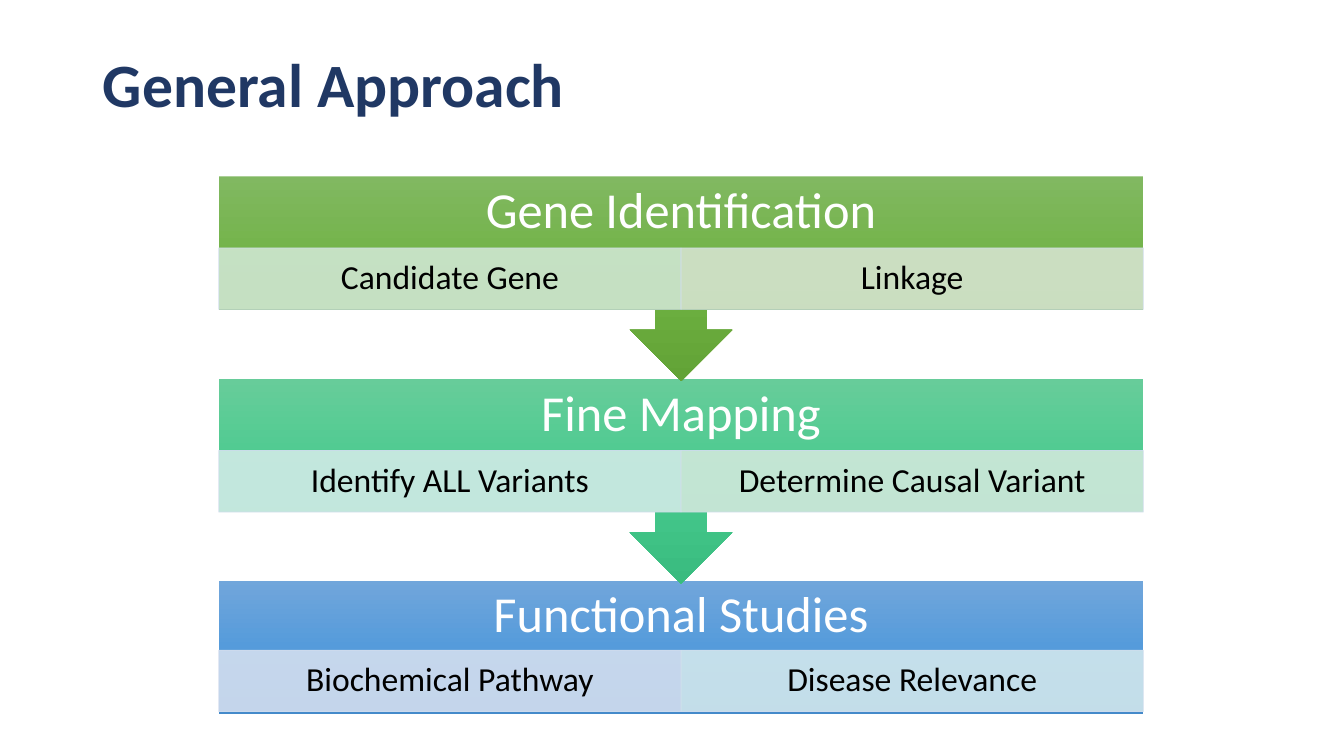
from copy import deepcopy

from pptx import Presentation
from pptx.dml.color import RGBColor
from pptx.enum.shapes import MSO_SHAPE
from pptx.enum.text import MSO_ANCHOR, PP_ALIGN
from pptx.oxml.ns import qn
from pptx.oxml.xmlchemy import OxmlElement
from pptx.util import Inches, Pt

RECTANGLE = MSO_SHAPE.RECTANGLE
DOWN_CALLOUT = MSO_SHAPE.DOWN_ARROW_CALLOUT
MIDDLE = MSO_ANCHOR.MIDDLE
LEFT, CENTER = PP_ALIGN.LEFT, PP_ALIGN.CENTER

FONT = "Calibri"
NAVY = RGBColor(0x20, 0x38, 0x64)
WHITE = RGBColor(0xFF, 0xFF, 0xFF)
BLACK = RGBColor(0x00, 0x00, 0x00)
CELL_LINE = RGBColor(0xD2, 0xDE, 0xEF)
GREENS = [RGBColor(0x81, 0xB8, 0x61), RGBColor(0x6F, 0xB2, 0x42), RGBColor(0x62, 0xA3, 0x36)]
TEALS = [RGBColor(0x67, 0xCC, 0x9A), RGBColor(0x47, 0xCB, 0x8E), RGBColor(0x39, 0xBB, 0x7F)]
BLUES = [RGBColor(0x71, 0xA6, 0xDB), RGBColor(0x55, 0x9B, 0xDB), RGBColor(0x44, 0x8A, 0xCA)]

STAGE_LEFT, STAGE_WIDTH = 2.17, 9.17
HEADER_HEIGHT, CELL_HEIGHT = 0.71, 0.61
CALLOUT_HEIGHT, BLOCK_HEIGHT = 2.03, 1.32

STAGES = [
    ("Gene Identification", 1.75, DOWN_CALLOUT, CALLOUT_HEIGHT, 0.71, GREENS,
     [("Candidate Gene", RGBColor(0xCF, 0xE6, 0xD1)),
      ("Linkage", RGBColor(0xD5, 0xE3, 0xCF))]),
    ("Fine Mapping", 3.76, DOWN_CALLOUT, CALLOUT_HEIGHT, 0.71, TEALS,
     [("Identify ALL Variants", RGBColor(0xD0, 0xEB, 0xE6)),
      ("Determine Causal Variant", RGBColor(0xD0, 0xE8, 0xDB))]),
    ("Functional Studies", 5.76, RECTANGLE, BLOCK_HEIGHT, 0.69, BLUES,
     [("Biochemical Pathway", RGBColor(0xD2, 0xDE, 0xEF)),
      ("Disease Relevance", RGBColor(0xD1, 0xE7, 0xED))]),
]


def write_text(shape, text, size, color, align=CENTER, bold=False):
    """Put one formatted line of text in the middle of a shape."""
    frame = shape.text_frame
    frame.text = text
    frame.word_wrap = True
    frame.vertical_anchor = MIDDLE
    para = frame.paragraphs[0]
    para.alignment = align
    para.line_spacing = 0.9
    font = para.runs[0].font
    font.name, font.size, font.bold = FONT, Pt(size), bold
    font.color.rgb = color


def fill_gradient(shape, colors):
    """Fill a shape from top to bottom with three evenly spaced colours."""
    shape.fill.gradient()
    shape.fill.gradient_angle = 270
    stop_list = shape.element.spPr.find(".//" + qn("a:gsLst"))
    stop_list.append(deepcopy(stop_list[-1]))
    for index, (stop, color) in enumerate(zip(shape.fill.gradient_stops, colors)):
        stop.position = index / 2
        stop.color.rgb = color


def add_title(slide, left, top, width, height):
    """Place the title in the given box."""
    title = slide.shapes.title
    title.left, title.top = Inches(left), Inches(top)
    title.width, title.height = Inches(width), Inches(height)
    write_text(title, "General Approach", 44, NAVY, LEFT, True)


def add_cell(slide, text, color, left, top, width, height):
    """Draw one slightly transparent step cell with its label."""
    cell = slide.shapes.add_shape(
        RECTANGLE, Inches(left), Inches(top), Inches(width), Inches(height))
    cell.shadow.inherit = False
    cell.fill.solid()
    cell.fill.fore_color.rgb = color
    cell.line.color.rgb = CELL_LINE
    cell.line.width = Pt(0.5)
    for color_element in cell.element.spPr.iter(qn("a:srgbClr")):
        alpha = OxmlElement("a:alpha")
        alpha.set("val", "90000")
        color_element.append(alpha)
    frame = cell.text_frame
    frame.margin_left = frame.margin_right = Inches(0.19)
    frame.margin_top = frame.margin_bottom = Inches(0.03)
    write_text(cell, text, 24, BLACK)


def add_stage(slide, heading, top, kind, height, cell_offset, colors, cells):
    """Draw a stage: gradient block, heading and a row of cells."""
    left, width = Inches(STAGE_LEFT), Inches(STAGE_WIDTH)
    block = slide.shapes.add_shape(kind, left, Inches(top), width, Inches(height))
    block.shadow.inherit = False
    block.line.fill.background()
    fill_gradient(block, colors)
    header = slide.shapes.add_textbox(left, Inches(top), width, Inches(HEADER_HEIGHT))
    write_text(header, heading, 36, WHITE)
    cell_width = STAGE_WIDTH / len(cells)
    for column, (text, color) in enumerate(cells):
        add_cell(slide, text, color, STAGE_LEFT + column * cell_width,
                 top + cell_offset, cell_width, CELL_HEIGHT)


def main():
    """Build the deck and save it."""
    deck = Presentation()
    deck.slide_width, deck.slide_height = Inches(13.33), Inches(7.5)
    slide = deck.slides.add_slide(deck.slide_layouts[5])
    add_title(slide, 0.92, 0.4, 11.5, 0.93)
    for stage in reversed(STAGES):
        add_stage(slide, *stage)
    deck.save("out.pptx")


if __name__ == "__main__":
    main()
